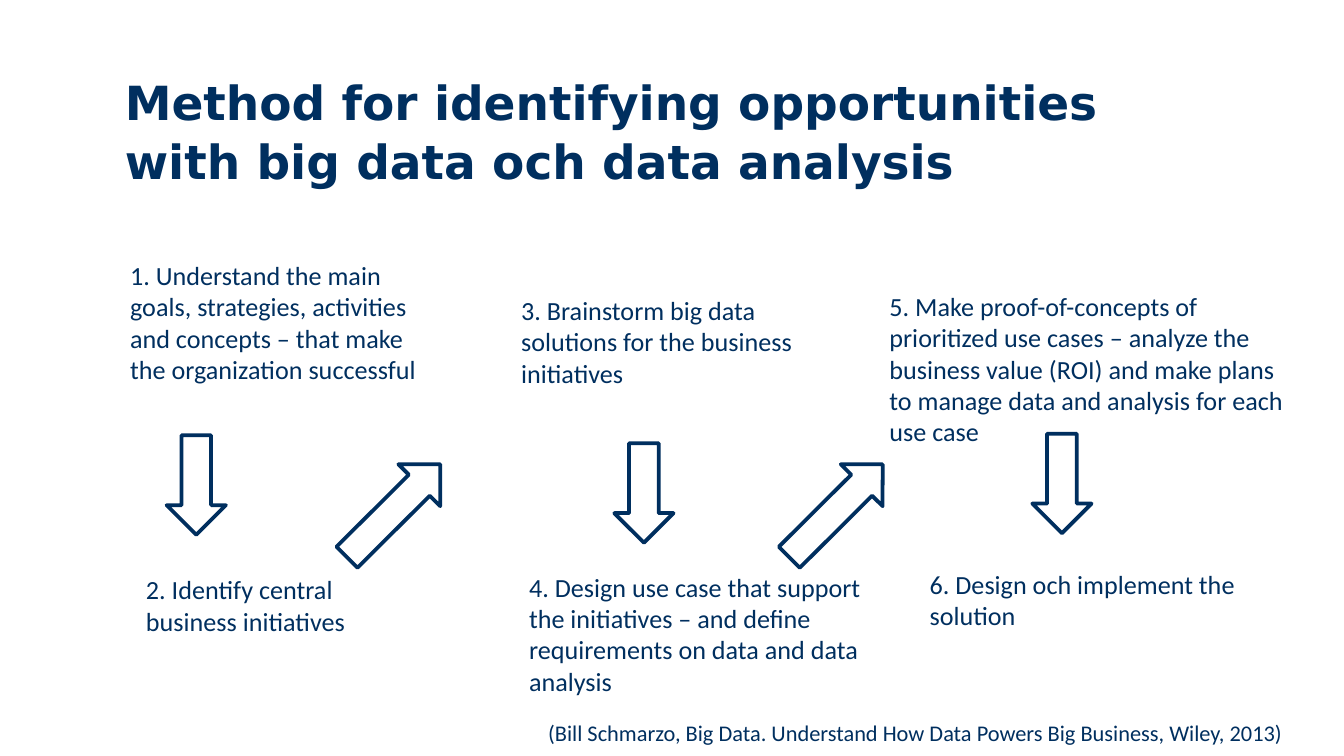
import pptx
import pptx.dml.color
import pptx.enum.shapes
import pptx.util

Cm, Pt = pptx.util.Cm, pptx.util.Pt
COLORS = {"navy": "002F5F", "white": "FFFFFF"}
NAVY = pptx.dml.color.RGBColor.from_string(COLORS["navy"])
WHITE = pptx.dml.color.RGBColor.from_string(COLORS["white"])

TITLE_FONT = {"name": "DejaVu Sans", "size": Pt(25.2), "bold": True}
STEP_FONT = {"name": "Calibri", "size": Pt(14)}
SOURCE_FONT = {"name": "Calibri", "size": Pt(12)}

prs = pptx.Presentation()
prs.slide_width, prs.slide_height = Cm(25.4), Cm(14.29)
s = prs.slides.add_slide(prs.slide_layouts[6])


def add_text(text, box, font):
    sp = s.shapes.add_textbox(*[Cm(v) for v in box])
    tf = sp.text_frame
    tf.word_wrap = True
    p = tf.paragraphs[0]
    r = p.add_run()
    r.text = text
    for key, value in font.items():
        setattr(r.font, key, value)
    r.font.color.rgb = NAVY
    return p


# Title
p = add_text("Method for identifying opportunities with big data och data analysis",
             (2.11, 1.22, 19.02, 1.65), TITLE_FONT)
p.line_spacing = 1.04

# Steps, numbered in reading order
steps = [
    ("Understand the main goals, strategies, activities and concepts – "
     "that make the organization successful", (2.21, 4.78, 6.22, 2.64)),
    ("Identify central business initiatives", (2.51, 10.72, 4.57, 1.45)),
    ("Brainstorm big data solutions for the business initiatives",
     (9.6, 5.44, 6.05, 2.06)),
    ("Design use case that support the initiatives – and define "
     "requirements on data and data analysis", (9.75, 10.67, 6.81, 2.64)),
    ("Make proof-of-concepts of prioritized use cases – analyze the business "
     "value (ROI) and make plans to manage data and analysis for each use case",
     (16.56, 5.36, 8.26, 3.25)),
    ("Design och implement the solution", (17.32, 10.62, 6.88, 1.45)),
]
for number, (text, box) in enumerate(steps, 1):
    add_text(f"{number}. {text}", box, STEP_FONT)

# Arrows from each step to the next: left, top, length, rotation
arrows = [
    (3.15, 8.23, 1.88, 0),
    (6.88, 8.41, 2.49, 225.1),
    (11.61, 8.38, 1.88, 0),
    (15.24, 8.41, 2.49, 225.1),
    (19.51, 8.2, 1.88, 0),
]
for left, top, length, rotation in arrows:
    sp = s.shapes.add_shape(pptx.enum.shapes.MSO_SHAPE.DOWN_ARROW,
                            Cm(left), Cm(top), Cm(1.12), Cm(length))
    sp.rotation = rotation
    sp.shadow.inherit = False
    sp.fill.solid()
    sp.fill.fore_color.rgb = WHITE
    sp.line.color.rgb = NAVY
    sp.line.width = Pt(2)

# Source reference
add_text("(Bill Schmarzo, Big Data. Understand How Data Powers Big Business, Wiley, 2013)",
         (10.11, 13.46, 14.55, 0.76), SOURCE_FONT)

prs.save("out.pptx")
